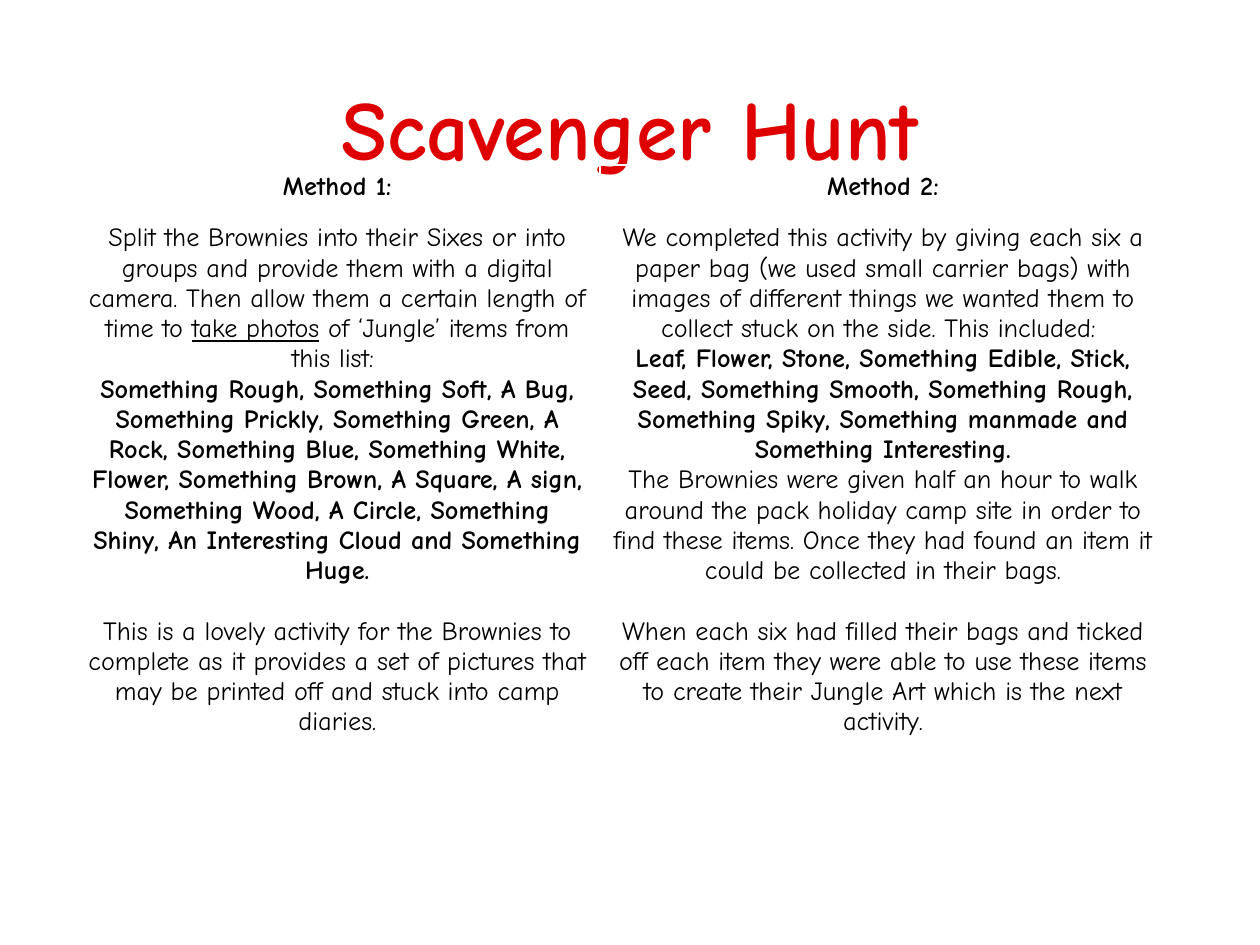
from dataclasses import dataclass

import lxml.etree
import pptx
import pptx.dml.color
import pptx.enum.text
import pptx.oxml
import pptx.oxml.ns
import pptx.util

Cm = pptx.util.Cm
Pt = pptx.util.Pt


@dataclass(frozen=True)
class Theme:
    font: str = "Comic Neue"
    title_color: str = "DE0000"
    title_outline: str = "1F3E00"
    body_color: str = "000000"
    title_size: int = 48
    body_size: int = 15
    section_gap: float = 17.3  # one body line


THEME = Theme()

# Paragraph: (starts a new section, [(text, style)]), style "b" bold, "u" underlined
METHOD_1 = [
    (False, [
        ("Split the Brownies into their Sixes or into groups and provide them "
         "with a digital camera. Then allow them a certain length of time to ", ""),
        ("take photos", "u"),
        (" of ‘Jungle’ items from this list: ", "")]),
    (False, [
        ("Something Rough, Something Soft, A Bug, Something Prickly, Something "
         "Green, A Rock, Something Blue, Something White, Flower, Something Brown, "
         "A Square, A sign, Something Wood, A Circle, Something Shiny, An "
         "Interesting Cloud and Something Huge.", "b")]),
    (True, [
        ("This is a lovely activity for the Brownies to complete as it provides a "
         "set of pictures that may be printed off and stuck into camp diaries.", "")]),
]
METHOD_2 = [
    (False, [
        ("We completed this activity by giving each six a paper bag (we used small "
         "carrier bags) with images of different things we wanted them to collect "
         "stuck on the side. This included: ", "")]),
    (False, [
        ("Leaf, Flower, Stone, Something Edible, Stick, Seed, Something Smooth, "
         "Something Rough, Something Spiky, Something manmade and Something "
         "Interesting.", "b")]),
    (False, [
        ("The Brownies were given half an hour to walk around the pack holiday camp "
         "site in order to find these items. Once they had found an item it could be "
         "collected in their bags.", "")]),
    (True, [
        ("When each six had filled their bags and ticked off each item they were "
         "able to use these items to create their Jungle Art which is the next "
         "activity.", "")]),
]
METHOD_ROWS = [
    [[(False, [("Method 1:", "b")])], [(False, [("Method 2:", "b")])]],
    [METHOD_1, METHOD_2],
]


def style_run(run, size, color, bold=False, underline=False):
    run.font.name = THEME.font
    run.font.size = Pt(size)
    run.font.bold = bold
    run.font.underline = underline
    run.font.color.rgb = pptx.dml.color.RGBColor.from_string(color)


def outline_run(run, color, width):
    namespace = pptx.oxml.ns.nsdecls("a")
    outline = pptx.oxml.parse_xml(
        f'<a:ln {namespace} w="{Pt(width)}"><a:solidFill>'
        f'<a:srgbClr val="{color}"/></a:solidFill></a:ln>')
    run.font._element.insert(0, outline)


def add_title(slide, left, top, width, height):
    title = slide.shapes.add_textbox(left, top, width, height)
    title.text_frame.word_wrap = True
    title.text_frame.text = "Scavenger Hunt"
    heading = title.text_frame.paragraphs[0]
    heading.alignment = pptx.enum.text.PP_ALIGN.CENTER
    style_run(heading.runs[0], THEME.title_size, THEME.title_color, bold=True)
    outline_run(heading.runs[0], THEME.title_outline, 1.5)


def fill_cell(cell, paragraphs):
    cell.fill.background()
    for index, (new_section, pieces) in enumerate(paragraphs):
        frame = cell.text_frame
        paragraph = frame.add_paragraph() if index else frame.paragraphs[0]
        paragraph.alignment = pptx.enum.text.PP_ALIGN.CENTER
        if new_section:
            paragraph.space_before = Pt(THEME.section_gap)
        for text, style in pieces:
            run = paragraph.add_run()
            run.text = text
            style_run(run, THEME.body_size, THEME.body_color,
                      bold=style == "b", underline=style == "u")


def add_methods(slide, left, top, width, first_width, row_height):
    methods = slide.shapes.add_table(2, 2, left, top, width, row_height * 2).table
    methods.first_row = False
    methods.horz_banding = False
    methods.columns[0].width = first_width
    methods.columns[1].width = width - first_width
    for row_index, row in enumerate(METHOD_ROWS):
        methods.rows[row_index].height = row_height
        for column_index, paragraphs in enumerate(row):
            fill_cell(methods.cell(row_index, column_index), paragraphs)


def main():
    deck = pptx.Presentation()
    deck.slide_width, deck.slide_height = Cm(25.4), Cm(19.05)
    slide = deck.slides.add_slide(deck.slide_layouts[6])

    # Heading
    add_title(slide, Cm(1.7), Cm(1.42), Cm(22), Cm(2.31))
    # Two methods side by side
    add_methods(slide, Cm(1.5), Cm(3.33), Cm(22), Cm(10.6), Cm(1.04))

    deck.save("out.pptx")


if __name__ == "__main__":
    main()
